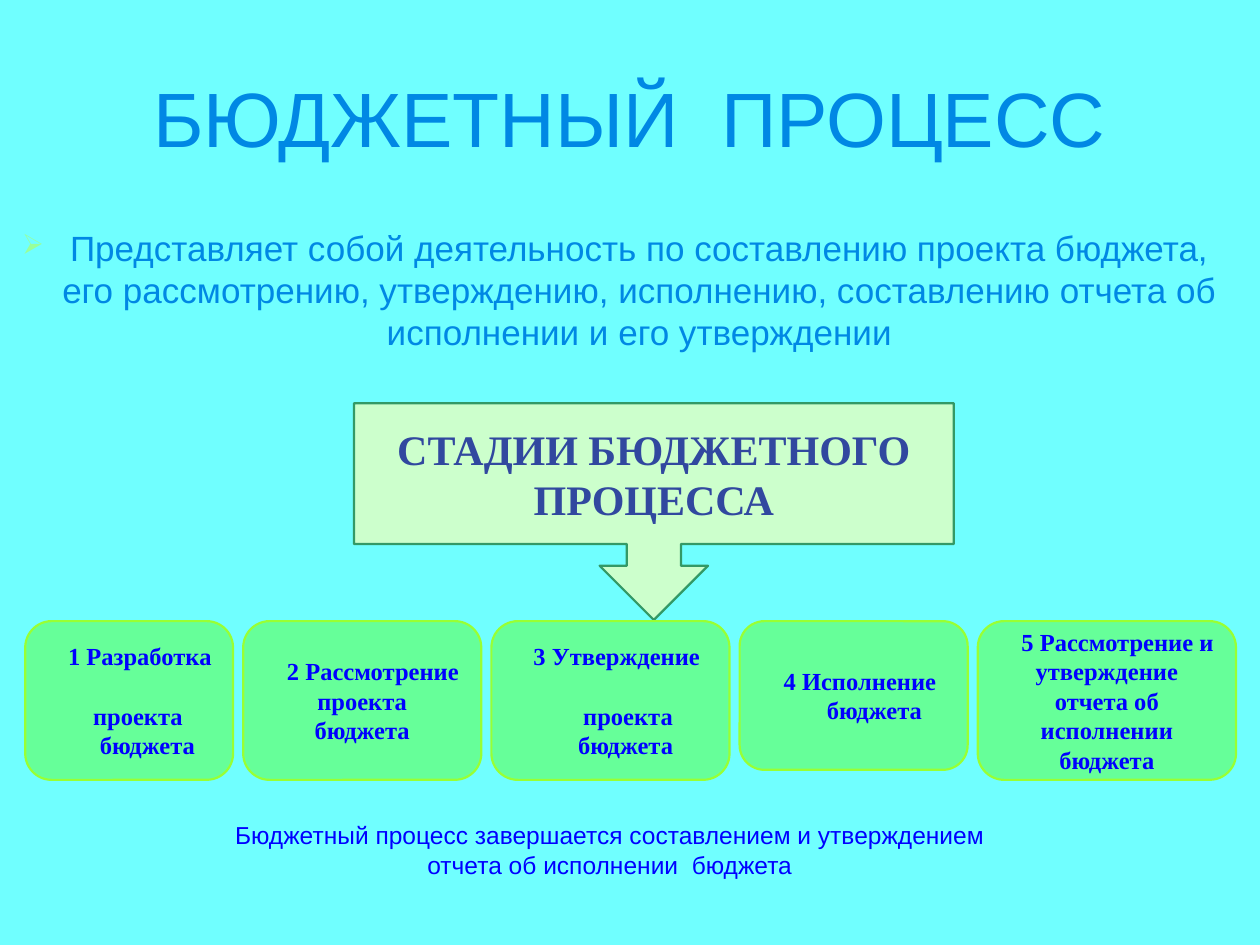
from lxml import etree
from pptx import Presentation
from pptx.dml.color import RGBColor
from pptx.enum.shapes import MSO_SHAPE
from pptx.enum.text import MSO_ANCHOR, PP_ALIGN
from pptx.oxml.ns import qn
from pptx.util import Inches, Pt

CENTER = PP_ALIGN.CENTER
MIDDLE = MSO_ANCHOR.MIDDLE
CALLOUT = MSO_SHAPE.DOWN_ARROW_CALLOUT
ROUNDED = MSO_SHAPE.ROUNDED_RECTANGLE

BACKGROUND = RGBColor(0x70, 0xFF, 0xFF)
AZURE = RGBColor(0x00, 0x88, 0xE4)
BLUE = RGBColor(0x00, 0x00, 0xFF)
INDIGO = RGBColor(0x31, 0x48, 0x9F)
PALE_GREEN = RGBColor(0xCC, 0xFF, 0xCC)
DARK_GREEN = RGBColor(0x33, 0x99, 0x66)
STAGE_GREEN = RGBColor(0x66, 0xFF, 0x99)
LIME = RGBColor(0x99, 0xFF, 0x33)
BULLET_GREEN = RGBColor(0x99, 0xFF, 0x99)

TITLE_FONT = {"name": "Arial", "size": Pt(44), "bold": False}
BODY_FONT = {"name": "Arial", "size": Pt(20)}
CALLOUT_FONT = {"name": "Times New Roman", "size": Pt(24), "bold": True}
STAGE_FONT = {"name": "Times New Roman", "size": Pt(14), "bold": True}
NOTE_FONT = {"name": "Arial", "size": Pt(14)}

STAGE_LEFT, STAGE_TOP, STAGE_GAP = 0.2, 4.93, 0.08
# Width, height, and paragraphs as (text, first-line indent in inches, points before)
STAGES = [
    (1.65, 1.26, [("1 Разработка", 0.17, 0), ("проекта", 0.14, 17), ("бюджета", 0.29, 0)]),
    (1.89, 1.26, [("2 Рассмотрение проекта", 0.17, 0), ("бюджета", 0, 0)]),
    (1.89, 1.26, [("3 Утверждение", 0.1, 0), ("проекта", 0.28, 17), ("бюджета", 0.24, 0)]),
    (1.81, 1.18, [("4 Исполнение", 0.1, 0), ("бюджета", 0.33, 0)]),
    (2.05, 1.26, [("5 Рассмотрение и утверждение отчета об исполнении бюджета", 0.17, 0)]),
]


def set_indent(p, left, first_line):
    pPr = p._p.get_or_add_pPr()
    pPr.set("marL", str(Inches(left)))
    pPr.set("indent", str(Inches(first_line)))


def add_bullet(p, char, color, percent):
    pPr = p._p.get_or_add_pPr()
    bu_color = etree.SubElement(pPr, qn("a:buClr"))
    etree.SubElement(bu_color, qn("a:srgbClr")).set("val", str(color))
    etree.SubElement(pPr, qn("a:buSzPct")).set("val", str(percent * 1000))
    etree.SubElement(pPr, qn("a:buChar")).set("char", char)


def write_paragraphs(tf, texts, font, color):
    """Fill the frame with centred paragraphs and return them."""
    tf.word_wrap = True
    for i, text in enumerate(texts):
        p = tf.paragraphs[0] if i == 0 else tf.add_paragraph()
        p.alignment = CENTER
        r = p.add_run()
        r.text = text
        for name, value in font.items():
            setattr(r.font, name, value)
        r.font.color.rgb = color
    return tf.paragraphs


def add_title(s, text):
    sp = s.shapes.title
    sp.left, sp.top, sp.width, sp.height = map(Inches, (0.5, 0.3, 9, 1.25))
    sp.text_frame.vertical_anchor = MIDDLE
    write_paragraphs(sp.text_frame, [text], TITLE_FONT, AZURE)


def add_text(s, box, texts, font, color):
    sp = s.shapes.add_textbox(*map(Inches, box))
    return write_paragraphs(sp.text_frame, texts, font, color)


def add_panel(s, kind, box, fill, line, texts, font, color):
    sp = s.shapes.add_shape(kind, *map(Inches, box))
    sp.shadow.inherit = False
    sp.fill.solid()
    sp.fill.fore_color.rgb = fill
    sp.line.color.rgb = line
    sp.line.width = Pt(1.25)
    sp.text_frame.vertical_anchor = MIDDLE
    return write_paragraphs(sp.text_frame, texts, font, color)


def add_stages(s):
    left = STAGE_LEFT
    for width, height, rows in STAGES:
        paragraphs = add_panel(s, ROUNDED, (left, STAGE_TOP, width, height), STAGE_GREEN,
                               LIME, [row[0] for row in rows], STAGE_FONT, BLUE)
        for p, (_, indent, before) in zip(paragraphs, rows):
            set_indent(p, 0, indent)
            p.space_before = Pt(before)
        left += width + STAGE_GAP


def main():
    prs = Presentation()
    prs.slide_width, prs.slide_height = Inches(10), Inches(7.5)
    s = prs.slides.add_slide(prs.slide_layouts[5])
    s.background.fill.solid()
    s.background.fill.fore_color.rgb = BACKGROUND

    add_title(s, "БЮДЖЕТНЫЙ  ПРОЦЕСС")
    definition = add_text(
        s, (0, 1.75, 9.77, 4.95),
        ["Представляет собой деятельность по составлению проекта бюджета, его рассмотрению, "
         "утверждению, исполнению, составлению отчета об исполнении и его утверждении"],
        BODY_FONT, AZURE)[0]
    set_indent(definition, 0.38, -0.38)
    definition.space_before = Pt(4)
    add_bullet(definition, "➢", BULLET_GREEN, 80)

    add_panel(s, CALLOUT, (2.81, 3.2, 4.76, 1.72), PALE_GREEN, DARK_GREEN,
              ["СТАДИИ БЮДЖЕТНОГО ПРОЦЕССА"], CALLOUT_FONT, INDIGO)
    add_stages(s)
    add_text(s, (0.7, 6.46, 8.28, 0.57),
             ["Бюджетный процесс завершается составлением и утверждением",
              "отчета об исполнении  бюджета"], NOTE_FONT, BLUE)
    prs.save("out.pptx")


if __name__ == "__main__":
    main()
